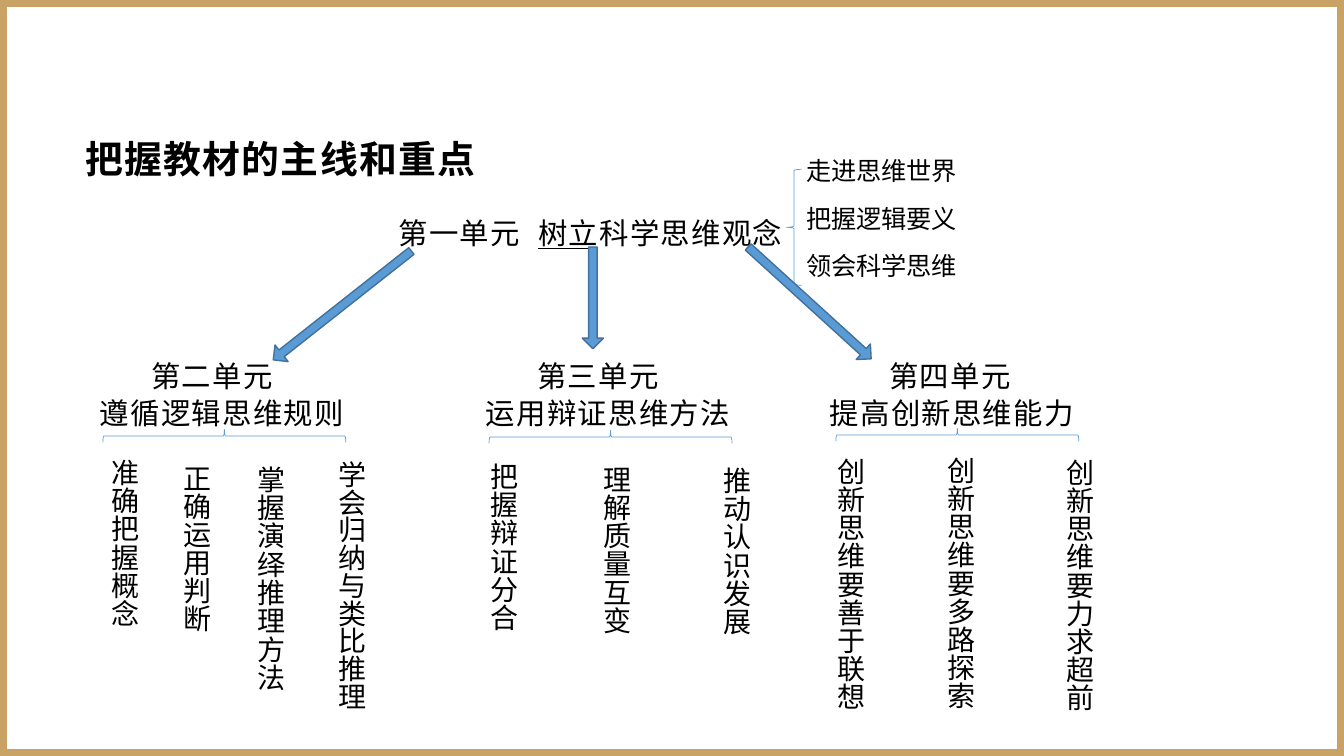
import math
from lxml import etree
from pptx import Presentation
from pptx.dml.color import RGBColor
from pptx.enum.shapes import MSO_SHAPE
from pptx.enum.text import PP_ALIGN
from pptx.oxml.ns import qn
from pptx.util import Inches, Pt

RECTANGLE, ARROW, BRACE = MSO_SHAPE.RECTANGLE, MSO_SHAPE.RIGHT_ARROW, MSO_SHAPE.LEFT_BRACE
LEFT, RIGHT = PP_ALIGN.LEFT, PP_ALIGN.RIGHT
WIDTH, HEIGHT = 13.33, 7.5
FONT = "Noto Sans CJK SC"
BLACK, GOLD, BLUE, NAVY = "000000", "C9A265", "5B9BD5", "41719C"
TOPICS_TOP, TOPIC_WIDTH, TOPIC_HEIGHT = 4.52, 0.4, 2.6
BRACE_WIDTH, BRACE_DEPTH = 2.41, 0.13

# Each unit: heading left, name indent, name, theme, brace left, brace top, topics (centre, drop, text, spacing).
UNITS = [
    (0.99, 0.51, "第二单元", "遵循逻辑思维规则", 1.02, 4.26, [
        (1.2, 0.03, "准确把握概念", 0.2), (1.92, 0.09, "正确运用判断", 0),
        (2.65, 0.1, "掌握演绎推理方法", 0.2), (3.45, 0.05, "学会归纳与类比推理", -0.2)]),
    (4.82, 0.51, "第三单元", "运用辩证思维方法", 4.85, 4.27, [
        (4.96, 0.07, "把握辩证分合", 0.2), (6.08, 0.1, "理解质量互变", 0.1),
        (7.27, 0.11, "推动认识发展", 0.2)]),
    (8.23, 0.59, "第四单元", "提高创新思维能力", 8.29, 4.25, [
        (8.4, 0.02, "创新思维要善于联想", 0.1), (9.49, 0.01, "创新思维要多路探索", 0.1),
        (10.67, 0.03, "创新思维要力求超前", 0.1)]),
]
ARROWS = [((4.08, 2.49), (2.71, 3.57)), ((5.88, 2.45), (5.88, 3.46)), ((7.42, 2.45), (8.64, 3.56))]


def color(hex_string):
    """Turn a hex string into a colour."""
    return RGBColor.from_string(hex_string)


def format_run(run, size, spacing=0, bold=False):
    """Set the font, size and letter spacing of a run."""
    run.font.size, run.font.bold = Pt(size), bold
    run.font.color.rgb = color(BLACK)
    run.font.name = FONT
    properties = run.font._element
    etree.SubElement(properties, qn("a:ea")).set("typeface", FONT)
    properties.set("spc", str(round(spacing * 100)))


def add_text(slide, box, lines, size, spacing=0, bold=False, align=LEFT, vertical=False):
    """Add a text box without margins, one paragraph per line."""
    frame = slide.shapes.add_textbox(*map(Inches, box)).text_frame
    frame.word_wrap = True
    frame.margin_left = frame.margin_right = frame.margin_top = frame.margin_bottom = 0
    if vertical:
        frame._txBody.bodyPr.set("vert", "eaVert")
    frame.text = "\n".join(lines)
    for paragraph in frame.paragraphs:
        paragraph.alignment = align
        for run in paragraph.runs:
            format_run(run, size, spacing, bold)
    return frame


def add_outline(slide, kind, box, line, points, fill=None, rotation=0):
    """Add an outlined preset shape, filled only if a colour is given."""
    shape = slide.shapes.add_shape(kind, *map(Inches, box))
    shape.shadow.inherit = False
    shape.rotation = rotation
    shape.line.color.rgb, shape.line.width = color(line), Pt(points)
    if fill:
        shape.fill.solid()
        shape.fill.fore_color.rgb = color(fill)
    else:
        shape.fill.background()
    return shape


def add_arrow(slide, start, end, thickness=0.21):
    """Add a block arrow that runs between two points."""
    across, down = end[0] - start[0], end[1] - start[1]
    length = math.hypot(across, down)
    box = ((start[0] + end[0] - length) / 2, (start[1] + end[1] - thickness) / 2, length, thickness)
    arrow = add_outline(slide, ARROW, box, NAVY, 1, BLUE, math.degrees(math.atan2(down, across)))
    arrow.adjustments[0], arrow.adjustments[1] = 0.4, 0.5


def add_top_brace(slide, left, top):
    """Add a brace that lies over a unit's topics and points up."""
    box = (left + (BRACE_WIDTH - BRACE_DEPTH) / 2, top + (BRACE_DEPTH - BRACE_WIDTH) / 2,
           BRACE_DEPTH, BRACE_WIDTH)
    add_outline(slide, BRACE, box, BLUE, 0.5, rotation=90)


def add_first_unit(slide):
    """Add the first unit's heading, its brace and its topics."""
    heading = add_text(slide, (3.5, 2.13, 4.26, 0.42), ["第一单元"], 21, 0.9, align=RIGHT).paragraphs[0]
    for text, spacing, underlined in ((" ", 7.4, False), ("树立", 0.9, True), ("科学思维观念", 0.9, False)):
        run = heading.add_run()
        run.text = text
        format_run(run, 21, spacing)
        run.font.underline = underlined
    topics = add_text(slide, (8, 1.54, 1.6, 1.45), ["走进思维世界", "把握逻辑要义", "领会科学思维"], 18, -0.1)
    for paragraph in topics.paragraphs[1:]:
        paragraph.space_before = Pt(12.4)
    add_outline(slide, BRACE, (7.8, 1.68, 0.15, 1.15), BLUE, 0.5)


def add_unit(slide, left, indent, name, theme, brace_left, brace_top, topics):
    """Add a unit's two-line heading, its brace and its vertical topics."""
    heading = add_text(slide, (left, 3.54, 2.5, 0.75), [name, theme], 21, 0.9)
    for paragraph in heading.paragraphs:
        paragraph.line_spacing = Pt(26.4)
    heading.paragraphs[0]._p.get_or_add_pPr().set("marL", str(Inches(indent)))
    add_top_brace(slide, brace_left, brace_top)
    for centre, drop, topic, spacing in topics:
        box = (centre - TOPIC_WIDTH / 2, TOPICS_TOP + drop, TOPIC_WIDTH, TOPIC_HEIGHT)
        add_text(slide, box, [topic], 20, spacing, vertical=True)


def main():
    """Build the slide and save it."""
    deck = Presentation()
    deck.slide_width, deck.slide_height = Inches(WIDTH), Inches(HEIGHT)
    slide = deck.slides.add_slide(deck.slide_layouts[6])
    add_outline(slide, RECTANGLE, (0, 0, WIDTH, HEIGHT), GOLD, 10)
    add_text(slide, (0.85, 1.35, 5, 0.54), ["把握教材的主线和重点"], 27, 0.9, bold=True)
    add_first_unit(slide)
    for unit in UNITS:
        add_unit(slide, *unit)
    for start, end in ARROWS:
        add_arrow(slide, start, end)
    deck.save("out.pptx")


if __name__ == "__main__":
    main()
